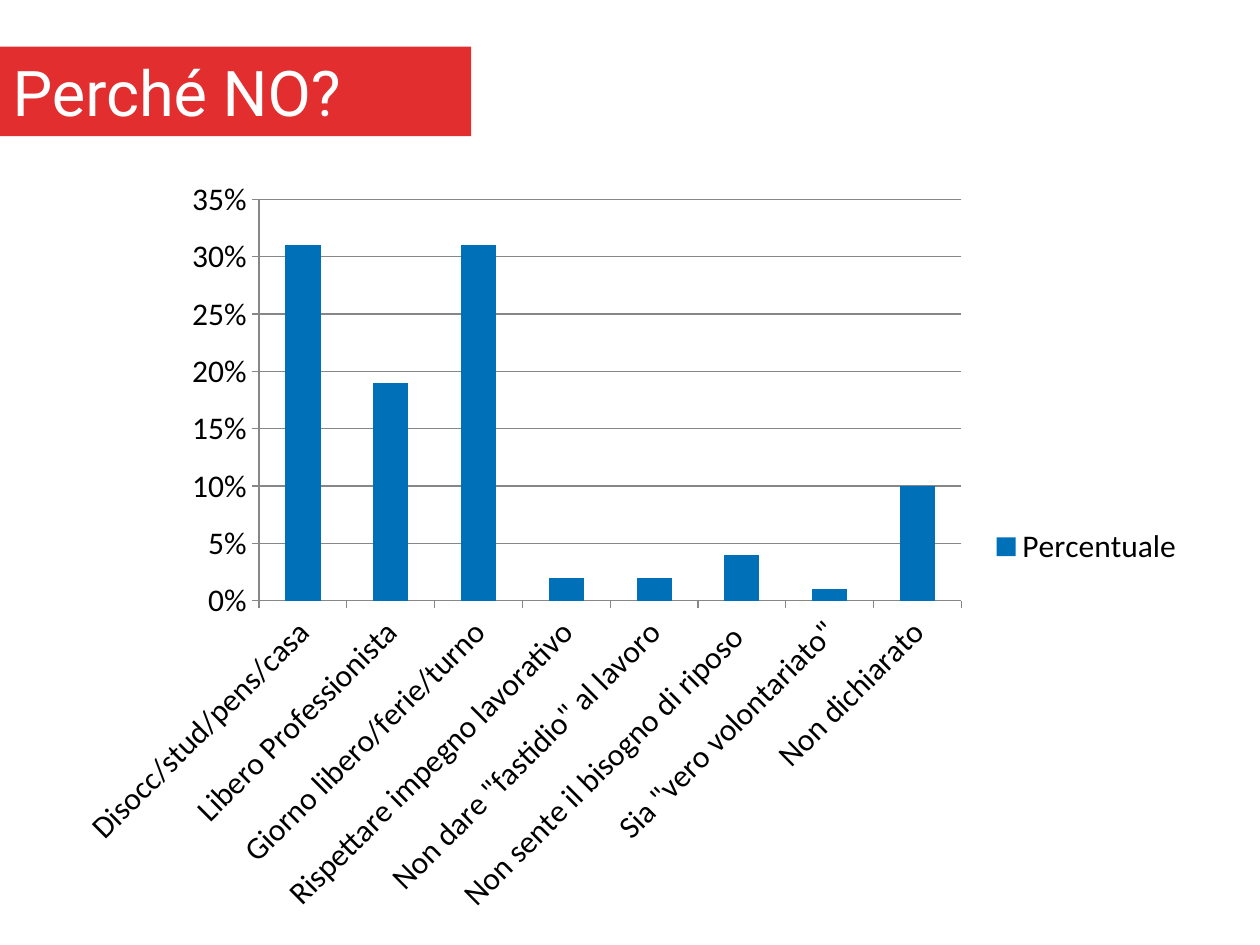
from dataclasses import dataclass

from pptx import Presentation
from pptx.chart.data import CategoryChartData
from pptx.dml.color import RGBColor
from pptx.enum.chart import XL_CHART_TYPE, XL_LEGEND_POSITION, XL_TICK_MARK
from pptx.enum.text import MSO_ANCHOR, PP_ALIGN
from pptx.util import Inches, Pt

COLUMNS = XL_CHART_TYPE.COLUMN_CLUSTERED
LEGEND_RIGHT = XL_LEGEND_POSITION.RIGHT
TICK_OUTSIDE = XL_TICK_MARK.OUTSIDE
TICK_NONE = XL_TICK_MARK.NONE
ANCHOR_MIDDLE = MSO_ANCHOR.MIDDLE
ALIGN_LEFT = PP_ALIGN.LEFT
TITLE_ONLY = 5

PAGE_WIDTH, PAGE_HEIGHT = Inches(10), Inches(7.5)


@dataclass(frozen=True)
class Theme:
    title_font: str = "Roboto"
    chart_font: str = "Calibri"
    title_size: int = 36
    chart_size: int = 18
    banner: str = "E22E2E"
    title: str = "FFFFFF"
    text: str = "000000"
    bars: str = "0070B8"
    lines: str = "878787"


THEME = Theme()

REASONS = {
    "Disocc/stud/pens/casa": 0.31,
    "Libero Professionista": 0.19,
    "Giorno libero/ferie/turno": 0.31,
    "Rispettare impegno lavorativo": 0.02,
    'Non dare "fastidio" al lavoro': 0.02,
    "Non sente il bisogno di riposo ": 0.04,
    'Sia "vero volontariato"': 0.01,
    "Non dichiarato": 0.1,
}


def set_font(font, name, size, color):
    font.name = name
    font.size = Pt(size)
    font.bold = False
    font.color.rgb = RGBColor.from_string(color)


def set_line(line):
    line.color.rgb = RGBColor.from_string(THEME.lines)
    line.width = Pt(0.75)


def fill_solid(fill, color):
    fill.solid()
    fill.fore_color.rgb = RGBColor.from_string(color)


def place(box, left, top, width, height):
    box.left, box.top = Inches(left), Inches(top)
    box.width, box.height = Inches(width), Inches(height)


def format_title(page, text):
    """Turn the title placeholder into a banner at the left edge."""
    banner = page.shapes.title
    place(banner, 0, 0.37, 3.74, 0.71)
    fill_solid(banner.fill, THEME.banner)
    frame = banner.text_frame
    frame.text = text
    frame.vertical_anchor = ANCHOR_MIDDLE
    para = frame.paragraphs[0]
    para.alignment = ALIGN_LEFT
    set_font(para.font, THEME.title_font, THEME.title_size, THEME.title)


def format_axes(chart):
    for axis in (chart.category_axis, chart.value_axis):
        axis.major_tick_mark = TICK_OUTSIDE
        axis.minor_tick_mark = TICK_NONE
        set_line(axis.format.line)
    values = chart.value_axis
    values.minimum_scale, values.maximum_scale = 0, 0.35
    values.major_unit = 0.05
    values.tick_labels.number_format = "0%"
    values.tick_labels.number_format_is_linked = False
    values.has_major_gridlines = True
    set_line(values.major_gridlines.format.line)


def add_column_chart(page, name, shares):
    chart_data = CategoryChartData(number_format="0%")
    chart_data.categories = list(shares)
    chart_data.add_series(name, list(shares.values()))
    chart = page.shapes.add_chart(
        COLUMNS, Inches(0.5), Inches(1.31), Inches(9), Inches(6.06), chart_data
    ).chart
    set_font(chart.font, THEME.chart_font, THEME.chart_size, THEME.text)
    chart.has_title = False
    chart.has_legend = True
    chart.legend.position = LEGEND_RIGHT
    chart.legend.include_in_layout = False
    plot = chart.plots[0]
    plot.vary_by_categories = False
    plot.gap_width = 150
    fill_solid(plot.series[0].format.fill, THEME.bars)
    format_axes(chart)


def main():
    deck = Presentation()
    deck.slide_width, deck.slide_height = PAGE_WIDTH, PAGE_HEIGHT
    page = deck.slides.add_slide(deck.slide_layouts[TITLE_ONLY])
    format_title(page, "Perché NO?")
    add_column_chart(page, "Percentuale", REASONS)
    deck.save("out.pptx")


if __name__ == "__main__":
    main()
